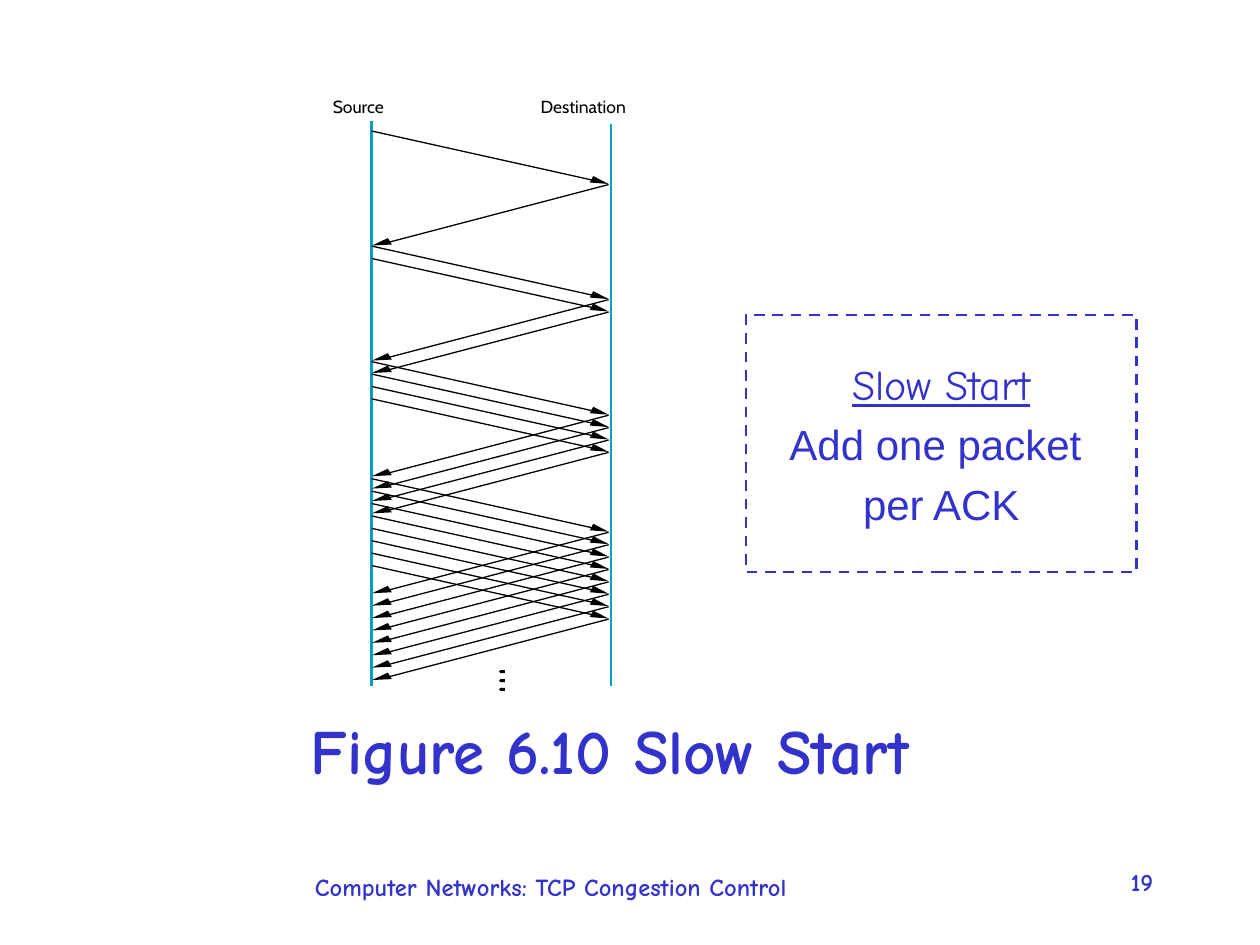
import pptx
import pptx.dml.color
import pptx.enum.dml
import pptx.enum.shapes
import pptx.enum.text
import pptx.oxml.ns
import pptx.util
from lxml import etree

Cm = pptx.util.Cm
Pt = pptx.util.Pt
Align = pptx.enum.text.PP_ALIGN
Anchor = pptx.enum.text.MSO_ANCHOR

BLUE, TEAL, BLACK = "3333CC", "00A0C6", "000000"
COMIC = "Comic Neue"


def colour(value):
    return pptx.dml.color.RGBColor.from_string(value)


class Sketch:
    """Holds the slide and draws styled elements; all lengths are in cm."""

    def __init__(self, slide):
        self.slide = slide
        self.shapes = slide.shapes

    def start_group(self):
        self.shapes = self.slide.shapes.add_group_shape().shapes

    def end_group(self):
        self.shapes = self.slide.shapes

    def span(self, para, text, size, font, tone=BLUE, bold=False, underline=False):
        span = para.add_run()
        span.text = text
        span.font.size = Pt(size)
        span.font.name = font
        span.font.bold = bold
        span.font.underline = underline
        span.font.color.rgb = colour(tone)

    def text(self, place, text, size, align=Align.LEFT, anchor=Anchor.TOP):
        box = self.shapes.add_textbox(*map(Cm, place))
        frame = box.text_frame
        frame.word_wrap = True
        frame.vertical_anchor = anchor
        para = frame.paragraphs[0]
        para.alignment = align
        self.span(para, text, size, COMIC, bold=True)

    def label(self, place, text):
        frame = self.shapes.add_textbox(*map(Cm, place)).text_frame
        frame.word_wrap = False
        frame.margin_left = frame.margin_right = 0
        frame.margin_top = frame.margin_bottom = 0
        self.span(frame.paragraphs[0], text, 10, "Cabin", BLACK)

    def line(self, start, end, tone=BLACK, width=0.75):
        line = self.shapes.add_connector(
            pptx.enum.shapes.MSO_CONNECTOR.STRAIGHT, *map(Cm, start + end))
        line.line.color.rgb = colour(tone)
        line.line.width = Pt(width)
        properties = line._element.spPr
        etree.SubElement(properties, pptx.oxml.ns.qn("a:effectLst"))

    def outline(self, *contours):
        """Fill one black freeform made of closed contours."""
        contours = [[(Cm(x), Cm(y)) for x, y in points] for points in contours]
        builder = self.shapes.build_freeform(*contours[0][0])
        for index, points in enumerate(contours):
            if index:
                builder.move_to(*points[0])
            builder.add_line_segments(points[1:], close=True)
        shape = builder.convert_to_shape()
        shape.shadow.inherit = False
        shape.fill.solid()
        shape.fill.fore_color.rgb = colour(BLACK)
        shape.line.fill.background()

    def panel(self, place, rows, size):
        panel = self.shapes.add_shape(
            pptx.enum.shapes.MSO_SHAPE.RECTANGLE, *map(Cm, place))
        panel.shadow.inherit = False
        panel.fill.background()
        panel.line.color.rgb = colour(BLUE)
        panel.line.width = Pt(1.5)
        panel.line.dash_style = pptx.enum.dml.MSO_LINE.DASH
        frame = panel.text_frame
        frame.word_wrap = False
        frame.vertical_anchor = Anchor.MIDDLE
        for index, (text, font, underline) in enumerate(rows):
            para = frame.add_paragraph() if index else frame.paragraphs[0]
            para.alignment = Align.CENTER
            para.space_before = Pt(5.5 if index else 0)
            self.span(para, text, size, font, underline=underline)

    def packet(self, y):
        """Arrow from source to destination."""
        self.line((SOURCE_X, y), (11.94, y + 0.99))
        self.outline([(11.89, y + 1.04), (12.27, y + 1.07), (11.96, y + 0.91)])

    def ack(self, y):
        """Arrow from destination back to source."""
        self.line((12.27, y), (7.85, y + 1.16))
        self.outline([(7.82, y + 1.08), (7.5, y + 1.23), (7.9, y + 1.21)])


SOURCE_X, DESTINATION_X = 7.49, 12.32
ROUND_STARTS = (2.64, 4.96, 7.29, 9.65)
PACKET_GAP = 0.25
ACK_DELAY = 1.08


def main():
    deck = pptx.Presentation()
    deck.slide_width, deck.slide_height = Cm(25.4), Cm(19.05)
    sketch = Sketch(deck.slides.add_slide(deck.slide_layouts[6]))

    # Footer and title
    sketch.text((6.1, 17.45, 13.79, 1.07),
                "Computer Networks: TCP Congestion Control", 14)
    sketch.text((19.69, 17.35, 3.81, 1.27), "19", 14, Align.RIGHT)
    sketch.text((1.5, 13.72, 21.59, 2.77), "Figure 6.10 Slow Start", 36,
                Align.CENTER, Anchor.MIDDLE)

    # Timelines of the two hosts
    sketch.start_group()
    sketch.label((6.71, 1.93, 1.12, 0.43), "Source")
    sketch.label((10.9, 1.93, 1.75, 0.43), "Destination")
    sketch.line((SOURCE_X, 2.44), (SOURCE_X, 13.82), TEAL, 1.5)
    sketch.line((DESTINATION_X, 2.49), (DESTINATION_X, 13.82), TEAL, 1.5)

    # Packets double every round, each answered by an ACK
    for round_number, start in enumerate(ROUND_STARTS):
        for index in range(2 ** round_number):
            y = start + index * PACKET_GAP
            sketch.packet(y)
            sketch.ack(y + ACK_DELAY)

    # Continuation dots
    sketch.outline(*[
        [(10.06, y), (10.09, y - 0.03), (10.18, y - 0.03),
         (10.18, y + 0.03), (10.09, y + 0.03)]
        for y in (13.54, 13.72, 13.9)])
    sketch.end_group()

    # Rule in the dashed panel
    sketch.panel((15.04, 6.35, 7.87, 5.18), [
        ("Slow Start", COMIC, True),
        ("Add one packet ", "Arial", False),
        ("per ACK", "Arial", False)], 24)

    deck.save("out.pptx")


if __name__ == "__main__":
    main()
